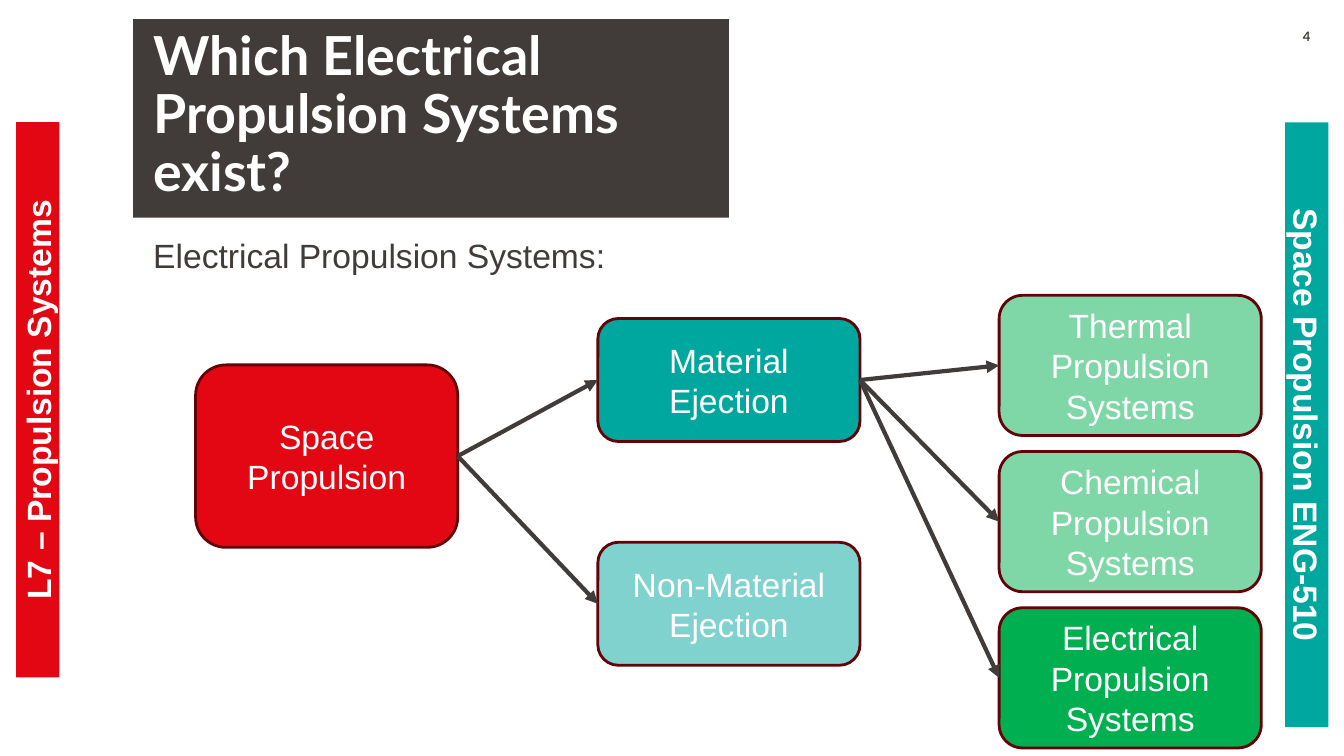
from dataclasses import dataclass

import lxml.etree
import pptx
import pptx.dml.color
import pptx.enum.shapes
import pptx.enum.text
import pptx.oxml.ns
import pptx.util
from pptx.enum.shapes import MSO_SHAPE
from pptx.enum.text import MSO_ANCHOR, PP_ALIGN

EMU_PER_PX = 9144
COLORS = {
    "white": "FFFFFF",
    "charcoal": "413C3A",
    "red": "E30613",
    "teal": "00A79F",
    "green": "00B050",
    "maroon": "630308",
}
NODE_WIDTH = 260
SYSTEMS_TOP, SYSTEMS_STEP, SYSTEMS_HEIGHT = 293, 155, 139


@dataclass(frozen=True)
class Node:
    text: str
    left: int
    top: int
    height: int
    fill: str
    opacity: int = 100
    parent: str = ""


@dataclass(frozen=True)
class Banner:
    text: str
    left: int
    top: int
    width: int
    height: int
    fill: str
    rotation: int


SYSTEMS = [("Thermal", 50), ("Chemical", 50), ("Electrical", 100)]
NODES = [
    Node("Space Propulsion", 194, 362, 181, "red"),
    Node("Material Ejection", 593, 316, 122, "teal", parent="Space Propulsion"),
    Node("Non-Material Ejection", 593, 538, 122, "teal", 50, "Space Propulsion"),
] + [
    Node(f"{system} Propulsion Systems", 991, SYSTEMS_TOP + row * SYSTEMS_STEP,
         SYSTEMS_HEIGHT, "green", opacity, "Material Ejection")
    for row, (system, opacity) in enumerate(SYSTEMS)
]
BANNERS = [
    Banner("Space Propulsion ENG-510", 996, 400, 600, 43, "teal", 90),
    Banner("L7 – Propulsion Systems", -238, 375, 551, 43, "red", 270),
]


def px(length: int) -> pptx.util.Emu:
    return pptx.util.Emu(length * EMU_PER_PX)


def color(name: str) -> pptx.dml.color.RGBColor:
    return pptx.dml.color.RGBColor.from_string(COLORS[name])


def append_element(parent, tag: str, **attributes: str) -> None:
    lxml.etree.SubElement(parent, pptx.oxml.ns.qn(tag), attributes)


def fill_shape(shape, fill: str, opacity: int = 100) -> None:
    shape.fill.solid()
    shape.fill.fore_color.rgb = color(fill)
    if opacity < 100:
        rgb = shape.element.spPr.find(".//" + pptx.oxml.ns.qn("a:srgbClr"))
        append_element(rgb, "a:alpha", val=str(opacity * 1000))


def write_text(shape, text: str, *, size: float = 24, font: str = "Arial",
               fill: str = "white", bold: bool = False,
               align: PP_ALIGN = PP_ALIGN.CENTER,
               anchor: MSO_ANCHOR = MSO_ANCHOR.MIDDLE,
               insets: tuple[int, int, int, int] = (10, 5, 10, 5),
               line_spacing: float = 1.0) -> None:
    frame = shape.text_frame
    frame.text = text
    frame.word_wrap = True
    frame.auto_size = pptx.enum.text.MSO_AUTO_SIZE.NONE
    frame.vertical_anchor = anchor
    (frame.margin_left, frame.margin_top,
     frame.margin_right, frame.margin_bottom) = map(px, insets)
    paragraph = frame.paragraphs[0]
    paragraph.alignment = align
    paragraph.line_spacing = line_spacing
    paragraph.font.size = pptx.util.Pt(size)
    paragraph.font.name = font
    paragraph.font.bold = bold
    paragraph.font.color.rgb = color(fill)


def add_title(slide) -> None:
    title = slide.shapes.title
    title.left, title.top, title.width, title.height = map(px, (132, 19, 591, 197))
    fill_shape(title, "charcoal")
    write_text(title, "Which Electrical Propulsion Systems exist?", size=38.4,
               font="Lato", bold=True, align=PP_ALIGN.LEFT,
               insets=(20, 0, 8, 5), line_spacing=0.9)


def add_banner(slide, banner: Banner) -> None:
    shape = slide.shapes.add_shape(
        MSO_SHAPE.RECTANGLE, px(banner.left), px(banner.top),
        px(banner.width), px(banner.height))
    shape.rotation = banner.rotation
    shape.shadow.inherit = False
    shape.line.fill.background()
    fill_shape(shape, banner.fill)
    write_text(shape, banner.text, bold=True)


def add_node(slide, node: Node):
    shape = slide.shapes.add_shape(
        MSO_SHAPE.ROUNDED_RECTANGLE, px(node.left), px(node.top),
        px(NODE_WIDTH), px(node.height))
    shape.shadow.inherit = False
    fill_shape(shape, node.fill, node.opacity)
    shape.line.color.rgb = color("maroon")
    shape.line.width = pptx.util.Pt(2)
    write_text(shape, node.text)
    return shape


def add_arrow(slide, source, target) -> None:
    arrow = slide.shapes.add_connector(
        pptx.enum.shapes.MSO_CONNECTOR.STRAIGHT, 0, 0, 0, 0)
    arrow.begin_connect(source, 3)
    arrow.end_connect(target, 1)
    arrow.line.color.rgb = color("charcoal")
    arrow.line.width = pptx.util.Pt(3)
    properties = arrow.element.spPr
    append_element(properties.find(pptx.oxml.ns.qn("a:ln")), "a:tailEnd", type="triangle")
    append_element(properties, "a:effectLst")


def main() -> None:
    presentation = pptx.Presentation()
    presentation.slide_width, presentation.slide_height = px(1333), px(750)
    slide = presentation.slides.add_slide(
        presentation.slide_layouts.get_by_name("Title Only"))

    add_title(slide)
    subtitle = slide.shapes.add_textbox(px(132), px(228), px(1127), px(50))
    write_text(subtitle, "Electrical Propulsion Systems:", fill="charcoal",
               align=PP_ALIGN.LEFT, anchor=MSO_ANCHOR.TOP, insets=(20, 5, 10, 5))
    slide_number = slide.shapes.add_textbox(px(1259), px(28), px(74), px(24))
    write_text(slide_number, "4", size=9.3, font="Lato", fill="charcoal", bold=True,
               anchor=MSO_ANCHOR.TOP, insets=(10, 0, 10, 0))

    for banner in BANNERS:
        add_banner(slide, banner)
    shapes = {node.text: add_node(slide, node) for node in NODES}
    for node in NODES:
        if node.parent:
            add_arrow(slide, shapes[node.parent], shapes[node.text])

    presentation.save("out.pptx")


if __name__ == "__main__":
    main()
